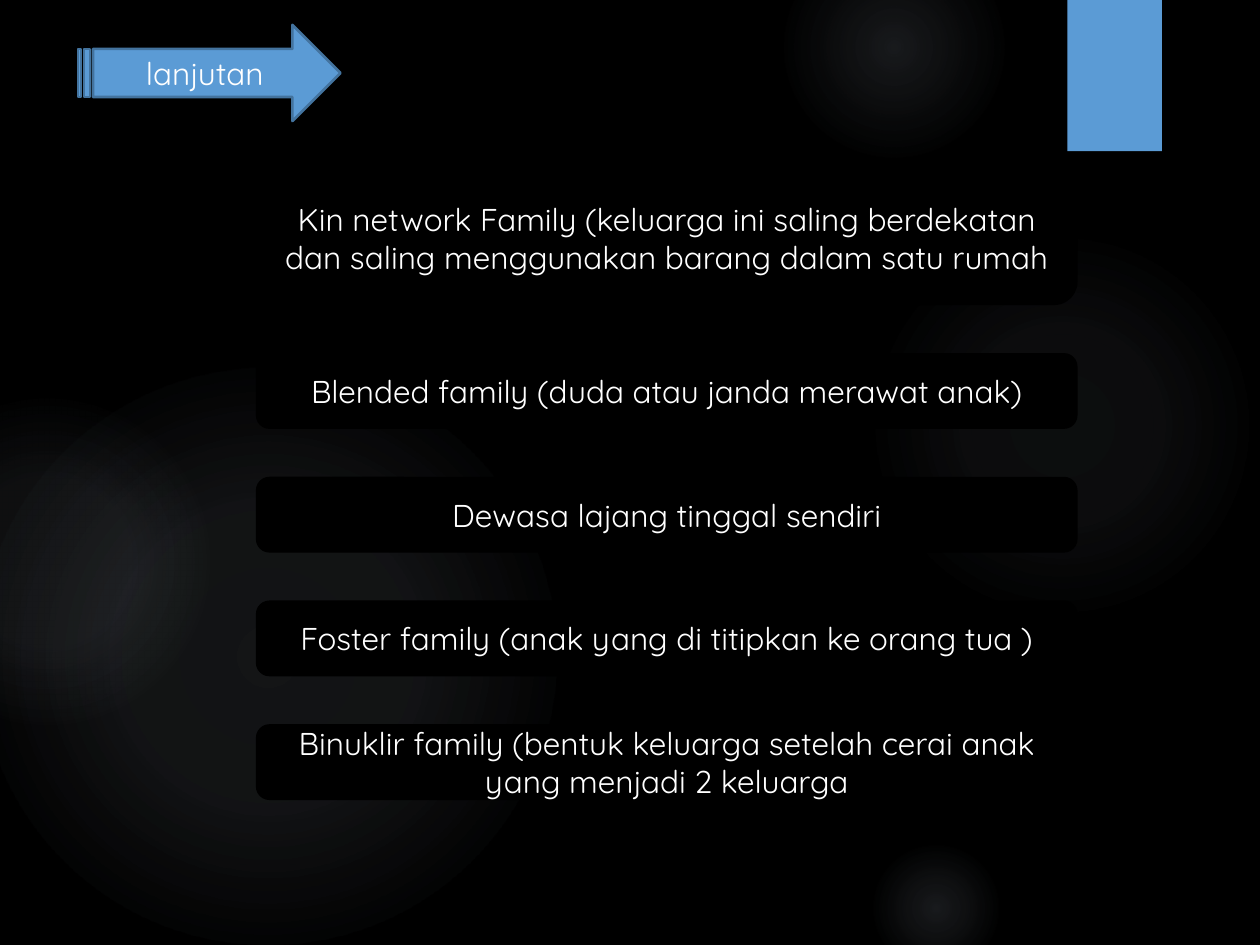
from pptx import Presentation
from pptx.dml.color import RGBColor
from pptx.enum.shapes import MSO_SHAPE as Kind
from pptx.enum.text import MSO_ANCHOR as Anchor, PP_ALIGN as Align
from pptx.oxml import parse_xml
from pptx.oxml.ns import nsdecls, qn
from pptx.util import Pt

BLACK = RGBColor(0x00, 0x00, 0x00)
WHITE = RGBColor(0xFF, 0xFF, 0xFF)
BLUE = RGBColor(0x5B, 0x9B, 0xD5)
EDGE = RGBColor(0x43, 0x73, 0x9E)
MIST = RGBColor(0xAD, 0xB9, 0xCA)

# left, top, size, then (position, opacity) in percent
GLOWS = [
    (496, 132, 222, [(0, 7), (36, 6), (69, 0)]),
    (448, -36, 126, [(0, 14), (36, 7), (73, 0)]),
    (496, 480, 78, [(0, 14), (36, 7), (66, 0)]),
    (-12, 210, 330, [(0, 11), (36, 10), (75, 0)]),
    (-66, 228, 186, [(0, 8), (36, 8), (72, 0)]),
]

TALL, LOW, GAP = 75.6, 41.8, 28.9
ROWS = [
    ("Kin network Family (keluarga ini saling berdekatan dan saling "
     "menggunakan barang dalam satu rumah", TALL),
    ("Blended family (duda atau janda merawat anak)", LOW),
    ("Dewasa lajang tinggal sendiri", LOW),
    ("Foster family (anak yang di titipkan ke orang tua )", LOW),
    ("Binuklir family (bentuk keluarga setelah cerai anak yang menjadi "
     "2 keluarga", LOW),
]


class Deck:
    font = "Quicksand"
    size = 18
    edge = 1.5

    def __init__(self, width, height):
        self.prs = Presentation()
        self.prs.slide_width, self.prs.slide_height = Pt(width), Pt(height)
        self.slide = self.prs.slides.add_slide(self.prs.slide_layouts[6])
        back = self.slide.background.fill
        back.solid()
        back.fore_color.rgb = BLACK

    def shape(self, kind, left, top, width, height, fill=None, line=None):
        shape = self.slide.shapes.add_shape(
            kind, Pt(left), Pt(top), Pt(width), Pt(height))
        shape.shadow.inherit = False
        if fill is None:
            shape.fill.background()
        else:
            shape.fill.solid()
            shape.fill.fore_color.rgb = fill
        if line is None:
            shape.line.fill.background()
        else:
            shape.line.color.rgb = line
            shape.line.width = Pt(self.edge)
        return shape

    def glow(self, left, top, size, stops):
        """Draw a circle that fades out from its centre."""
        shape = self.shape(Kind.OVAL, left, top, size, size)
        marks = "".join(
            f'<a:gs pos="{pos * 1000}"><a:srgbClr val="{MIST}">'
            f'<a:alpha val="{alpha * 1000}"/></a:srgbClr></a:gs>'
            for pos, alpha in stops)
        grad = parse_xml(
            f'<a:gradFill {nsdecls("a")}><a:gsLst>{marks}</a:gsLst>'
            '<a:path path="circle"><a:fillToRect l="50000" t="50000" '
            'r="50000" b="50000"/></a:path></a:gradFill>')
        props = shape._element.spPr
        props.replace(props.find(qn("a:noFill")), grad)

    def label(self, kind, text, left, top, width, height, fill, line):
        shape = self.shape(kind, left, top, width, height, fill, line)
        frame = shape.text_frame
        frame.text = text
        frame.word_wrap = True
        frame.vertical_anchor = Anchor.MIDDLE
        para = frame.paragraphs[0]
        para.alignment = Align.CENTER
        font = para.runs[0].font
        font.name, font.size = self.font, Pt(self.size)
        font.color.rgb = WHITE

    def save(self):
        self.prs.save("out.pptx")


def main():
    deck = Deck(720, 540)
    for glow in GLOWS:
        deck.glow(*glow)
    deck.shape(Kind.RECTANGLE, 610, 0, 54, 86.4, BLUE)
    deck.label(Kind.STRIPED_RIGHT_ARROW, "lanjutan",
               44.6, 14.2, 150, 55, BLUE, EDGE)
    top = 98
    for text, height in ROWS:
        deck.label(Kind.ROUNDED_RECTANGLE, text,
                   147, top, 468, height, BLACK, BLACK)
        top += height + GAP
    deck.save()


if __name__ == "__main__":
    main()
